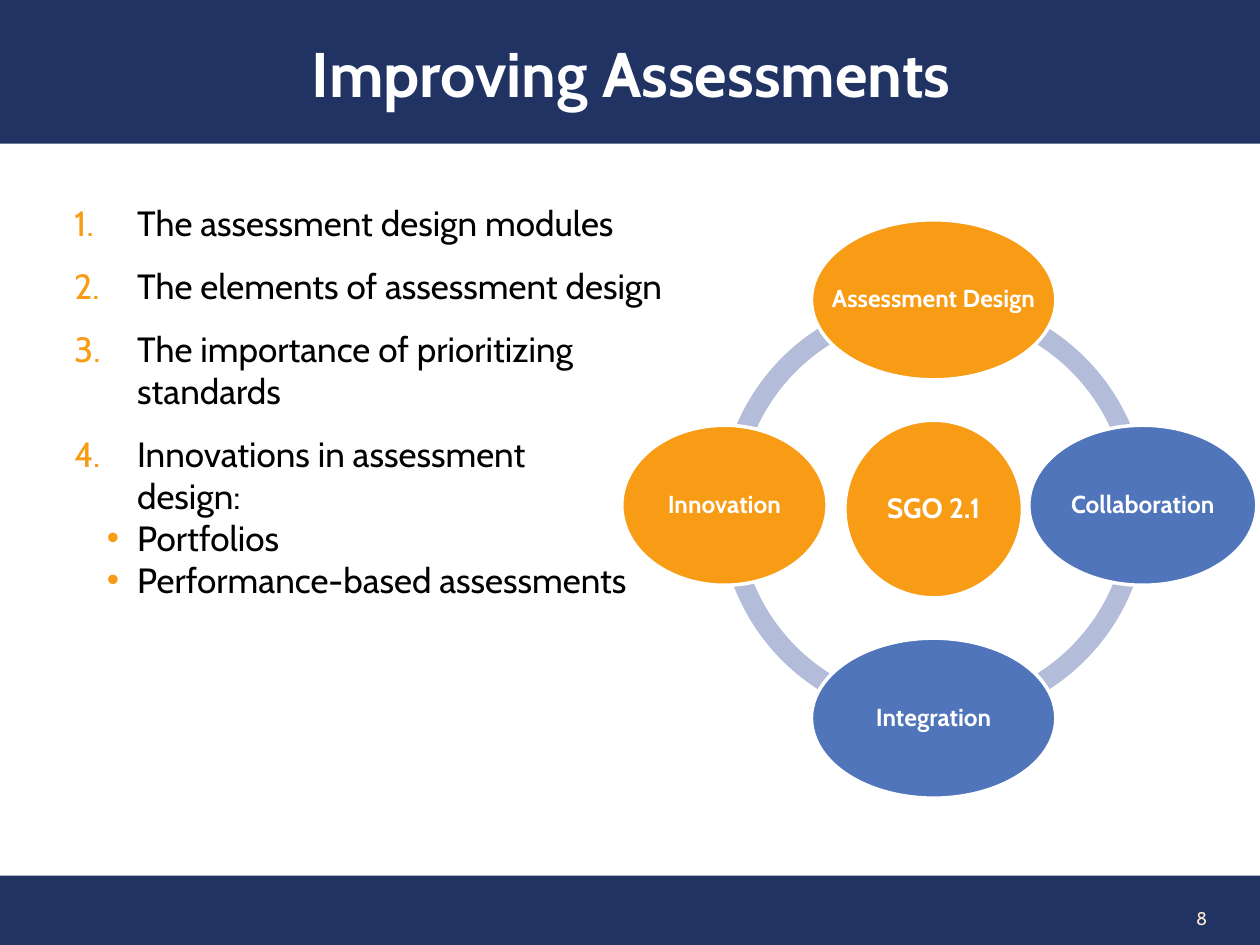
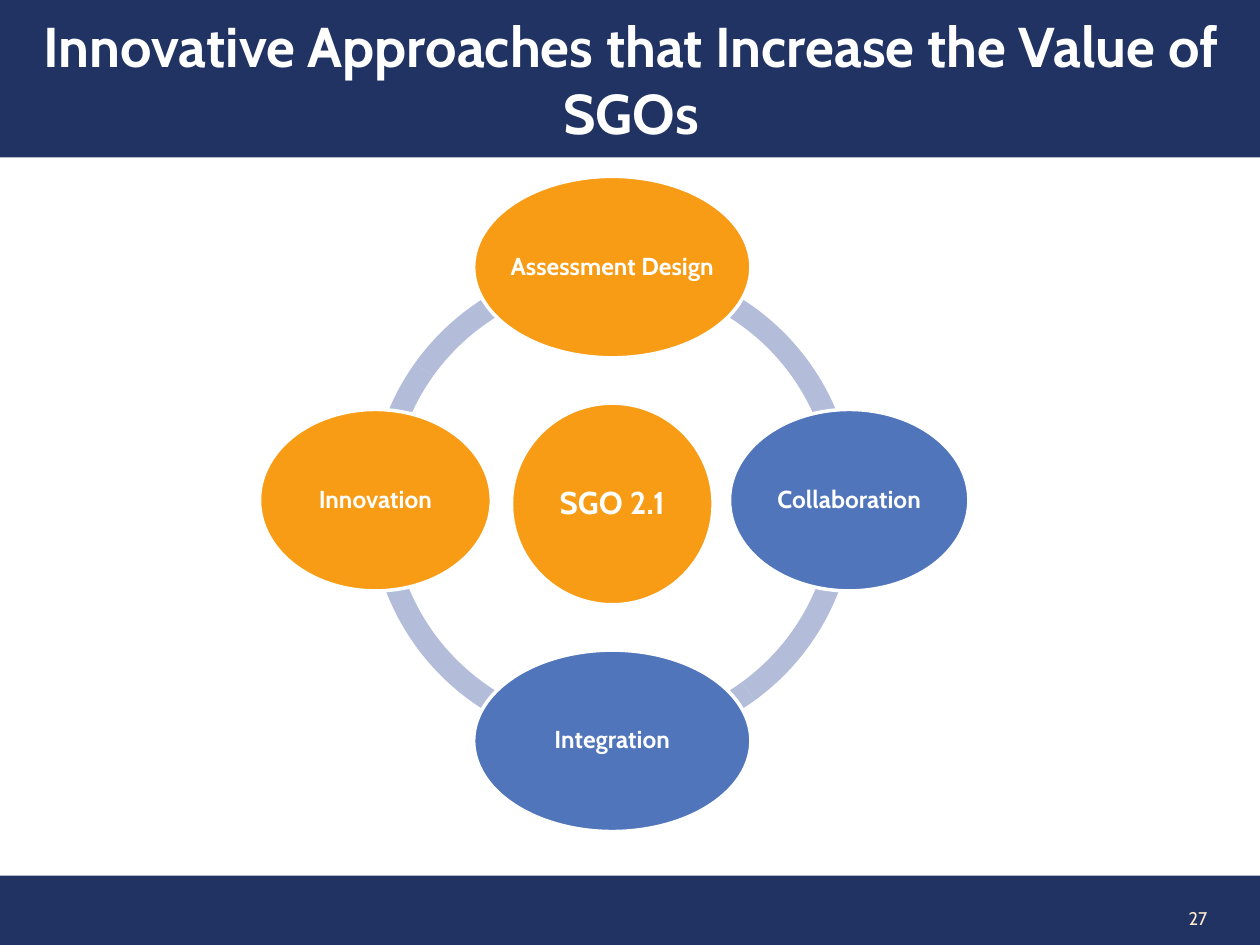
from lxml import etree
from pptx import Presentation
from pptx import util as u
from pptx.dml.color import RGBColor
from pptx.enum import shapes, text
from pptx.oxml import ns

NAVY, ORANGE, BLUE, RING = "213363", "F89C15", "5075BB", "B3BDDA"
WHITE, BLACK, CREAM = "FFFFFF", "000000", "FEEACE"
BAND_WIDTH = 10.02


def paint(target, colour):
    if hasattr(target, "solid"):
        target.solid()
        target.fore_color.rgb = RGBColor.from_string(colour)
    else:
        target.rgb = RGBColor.from_string(colour)


def write(paragraph, words, size, colour, bold=False):
    run = paragraph.add_run()
    run.text = words
    run.font.name = "Cabin"
    run.font.size = u.Pt(size)
    run.font.bold = bold
    paint(run.font.color, colour)


pages = [
    {"title": "Improving Assessments", "title_size": 36, "band": 1.14, "number": "8",
     "centre": (7.41, 4.04), "ring": 3.4, "orbit": 1.66, "hub": 1.41, "hub_size": 16,
     "node_height": 1.27, "node_widths": (1.94, 1.81, 1.94, 1.63)},
    {"title": "Innovative Approaches that Increase the Value of SGOs", "title_size": 32,
     "band": 1.25, "number": "27",
     "centre": (4.86, 4), "ring": 3.85, "orbit": 1.88, "hub": 1.6, "hub_size": 18,
     "node_height": 1.44, "node_widths": (2.2, 1.9, 2.2, 1.84)},
]
themes = [
    ("Assessment Design", ORANGE, 0, -1),
    ("Collaboration", BLUE, 1, 0),
    ("Integration", BLUE, 0, 1),
    ("Innovation", ORANGE, -1, 0),
]
arc_angles = [54, 108.47, 162, 215.53, 54]
agenda = [
    ("number", ["The assessment design modules"]),
    ("number", ["The elements of assessment design"]),
    ("number", ["The importance of prioritizing standards"]),
    ("number", ["Innovations in assessment", "design:"]),
    ("bullet", ["Portfolios"]),
    ("bullet", ["Performance-based assessments"]),
]

prs = Presentation()
prs.slide_width, prs.slide_height = u.Inches(10), u.Inches(7.5)

for page in pages:
    slide = prs.slides.add_slide(prs.slide_layouts[5])

    footer = slide.shapes.add_shape(shapes.MSO_SHAPE.RECTANGLE, 0, u.Inches(6.95),
                                    u.Inches(BAND_WIDTH), u.Inches(0.59))
    footer.shadow.inherit = False
    paint(footer.fill, NAVY)
    footer.line.fill.background()

    page_number = slide.shapes.add_textbox(u.Inches(8.22), u.Inches(7.09),
                                           u.Inches(1.46), u.Inches(0.4)).text_frame
    page_number.word_wrap = True
    page_number.vertical_anchor = text.MSO_ANCHOR.MIDDLE
    page_number.paragraphs[0].alignment = text.PP_ALIGN.RIGHT
    write(page_number.paragraphs[0], page["number"], 10.5, CREAM)

    title = slide.shapes.title
    title.left, title.top = 0, 0
    title.width, title.height = u.Inches(BAND_WIDTH), u.Inches(page["band"])
    paint(title.fill, NAVY)
    heading = title.text_frame
    heading.auto_size = text.MSO_AUTO_SIZE.NONE
    heading.word_wrap = True
    heading.vertical_anchor = text.MSO_ANCHOR.MIDDLE
    heading.margin_top = heading.margin_bottom = u.Inches(0.1)
    heading.paragraphs[0].alignment = text.PP_ALIGN.CENTER
    write(heading.paragraphs[0], page["title"], page["title_size"], WHITE, True)

    if page is pages[0]:
        body = slide.shapes.add_textbox(u.Inches(0.25), u.Inches(1.5),
                                        u.Inches(5.33), u.Inches(4.95)).text_frame
        body.word_wrap = True
        body.margin_top = body.margin_bottom = u.Inches(0.1)
        for index, (kind, lines) in enumerate(agenda):
            item = body.add_paragraph() if index else body.paragraphs[0]
            numbered = kind == "number"
            if numbered and index:
                item.space_before = u.Pt(12)
            props = item._p.get_or_add_pPr()
            props.set("marL", str(u.Inches(0.74)))
            props.set("indent", str(u.Inches(-0.5 if numbered else -0.24)))
            marker_colour = etree.SubElement(props, ns.qn("a:buClr"))
            etree.SubElement(marker_colour, ns.qn("a:srgbClr"), val=ORANGE)
            if numbered:
                etree.SubElement(props, ns.qn("a:buFont"), typeface="+mj-lt")
                etree.SubElement(props, ns.qn("a:buAutoNum"), type="arabicPeriod")
            else:
                etree.SubElement(props, ns.qn("a:buFont"), typeface="Arial")
                etree.SubElement(props, ns.qn("a:buChar"), char="•")
            for line_index, line in enumerate(lines):
                if line_index:
                    item.add_line_break()
                write(item, line, 20, BLACK)

    centre_x, centre_y = page["centre"]
    ring = page["ring"]
    for start, end in zip(arc_angles, arc_angles[1:]):
        arc = slide.shapes.add_shape(
            shapes.MSO_SHAPE.BLOCK_ARC, u.Inches(centre_x - ring / 2),
            u.Inches(centre_y - ring / 2), u.Inches(ring), u.Inches(ring))
        arc.shadow.inherit = False
        arc.adjustments[0] = start * 0.6
        arc.adjustments[1] = end * 0.6
        arc.adjustments[2] = 0.046
        paint(arc.fill, RING)
        arc.line.fill.background()

    ovals = [("SGO 2.1", ORANGE, centre_x, centre_y, page["hub"], page["hub"], page["hub_size"])]
    for (theme, colour, dx, dy), width in zip(themes, page["node_widths"]):
        side_lift = 0.03 * abs(dx)
        ovals.append((theme, colour, centre_x + dx * page["orbit"],
                      centre_y + dy * page["orbit"] - side_lift,
                      width, page["node_height"], 14))
    for label, colour, x, y, width, height, size in ovals:
        oval = slide.shapes.add_shape(
            shapes.MSO_SHAPE.OVAL, u.Inches(x - width / 2), u.Inches(y - height / 2),
            u.Inches(width), u.Inches(height))
        oval.shadow.inherit = False
        paint(oval.fill, colour)
        paint(oval.line.fill, WHITE)
        oval.line.width = u.Pt(2)
        caption = oval.text_frame
        caption.word_wrap = False
        caption.vertical_anchor = text.MSO_ANCHOR.MIDDLE
        caption.margin_left = caption.margin_right = u.Inches(0.02)
        caption.margin_top = caption.margin_bottom = u.Inches(0.02)
        caption.paragraphs[0].alignment = text.PP_ALIGN.CENTER
        caption.paragraphs[0].line_spacing = 0.9
        write(caption.paragraphs[0], label, size, WHITE, True)

prs.save("out.pptx")
